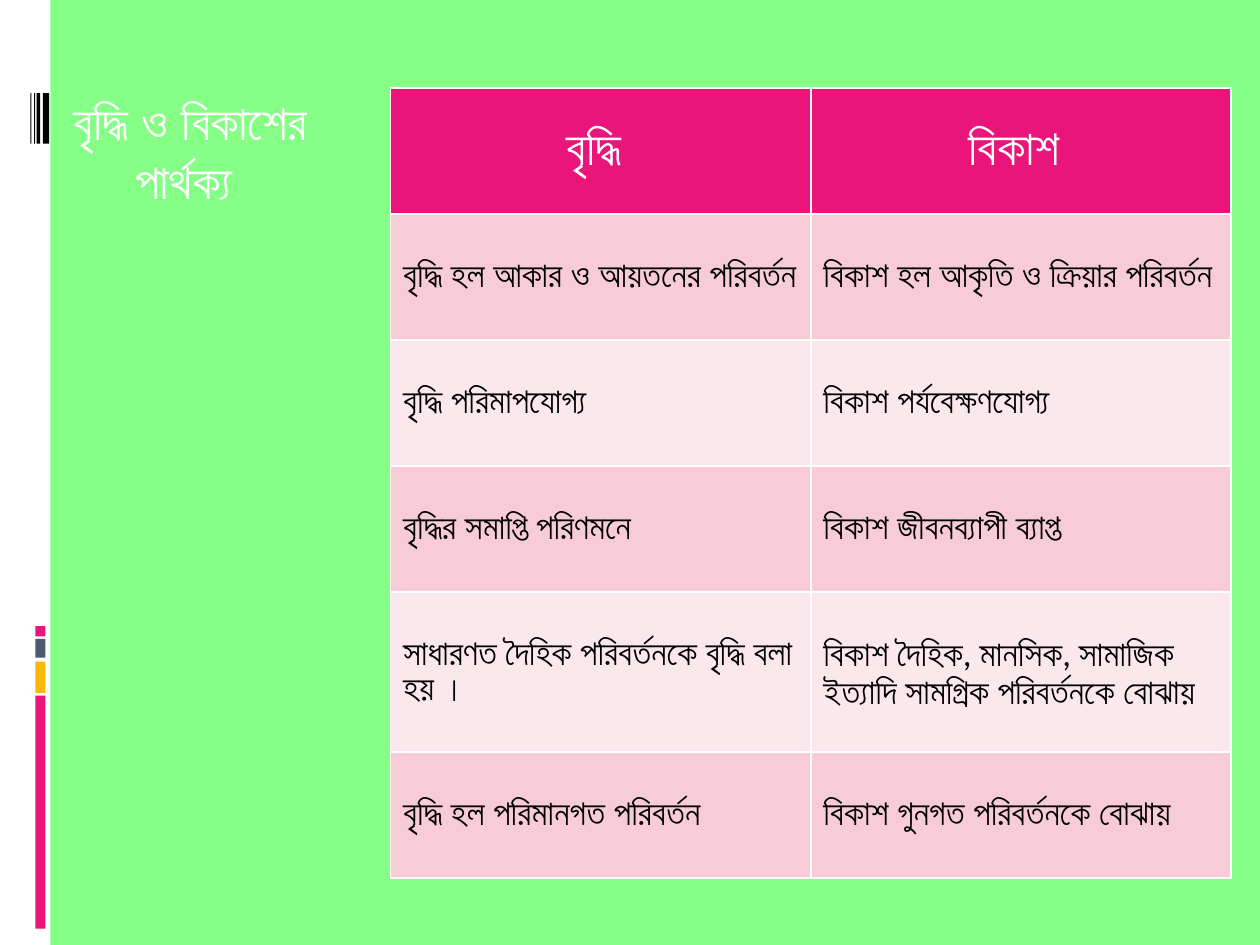
"""Build the slide comparing growth and development."""
from dataclasses import dataclass

from lxml import etree
from pptx import Presentation
from pptx.dml.color import RGBColor
from pptx.enum import shapes, text
from pptx.oxml import ns
from pptx.util import Inches, Pt


@dataclass(frozen=True)
class Theme:
    background: str = "85FF85"
    white: str = "FFFFFF"
    black: str = "000000"
    pink: str = "EA157A"
    amber: str = "FEB80A"
    slate: str = "4E5B6F"
    bands: tuple = ("F7CCD7", "FBE8EC")
    title_font: str = "Lato"
    table_font: str = "Calibri"
    heading_size: int = 28
    body_size: int = 20


@dataclass(frozen=True)
class Bar:
    left: float
    top: float
    width: float
    height: float
    color: str


THEME = Theme()
BARS = [
    Bar(0, 0, 0.4, 7.5, THEME.white),
    *(Bar(left, 0.74, width, 0.4, THEME.black)
      for left, width in ((0.34, 0.05), (0.29, 0.03), (0.27, 0.01), (0.24, 0.01))),
    *(Bar(0.28, top, 0.08, height, color)
      for top, height, color in ((5.52, 1.85, THEME.pink), (5.25, 0.25, THEME.amber),
                                 (5.07, 0.15, THEME.slate), (4.97, 0.08, THEME.pink))),
]
TITLE = ("বৃদ্ধি ও বিকাশের", "পার্থক্য ")
ROWS = [
    ("বৃদ্ধি ", "বিকাশ "),
    ("বৃদ্ধি হল আকার ও আয়তনের পরিবর্তন", "বিকাশ হল আকৃতি ও ক্রিয়ার পরিবর্তন"),
    ("বৃদ্ধি পরিমাপযোগ্য", "বিকাশ পর্যবেক্ষণযোগ্য"),
    ("বৃদ্ধির সমাপ্তি পরিণমনে", "বিকাশ জীবনব্যাপী ব্যাপ্ত"),
    ("সাধারণত দৈহিক পরিবর্তনকে বৃদ্ধি বলা হয় ।",
     "বিকাশ দৈহিক, মানসিক, সামাজিক ইত্যাদি সামগ্রিক পরিবর্তনকে বোঝায়"),
    ("বৃদ্ধি হল পরিমানগত পরিবর্তন", "বিকাশ গুনগত পরিবর্তনকে বোঝায়"),
]
ROW_HEIGHTS = (1, 1, 1, 1, 1.27, 1)
HEADING = {"size": Pt(THEME.heading_size), "bold": True}
BODY = {"size": Pt(THEME.body_size), "bold": False}


def paint(fill, color: str) -> None:
    """Give a fill one solid colour."""
    fill.solid()
    fill.fore_color.rgb = RGBColor.from_string(color)


def write(paragraph, content: str, name: str, color: str, values: dict, alignment) -> None:
    """Write one formatted run into a paragraph."""
    paragraph.alignment = alignment
    run = paragraph.add_run()
    run.text = content
    for attribute, value in {**values, "name": name}.items():
        setattr(run.font, attribute, value)
    run.font.color.rgb = RGBColor.from_string(color)


def draw_bar(slide, bar: Bar) -> None:
    """Draw one borderless bar of the side strip."""
    shape = slide.shapes.add_shape(
        shapes.MSO_SHAPE.RECTANGLE,
        *map(Inches, (bar.left, bar.top, bar.width, bar.height)))
    shape.shadow.inherit = False
    paint(shape.fill, bar.color)
    shape.line.fill.background()


def draw_title(slide) -> None:
    """Fill and move the title placeholder."""
    title = slide.shapes.title
    box = {"left": 0, "top": 0.68, "width": 3.02, "height": 1.04}
    for attribute, value in box.items():
        setattr(title, attribute, Inches(value))
    frame = title.text_frame
    settings = {"word_wrap": True, "vertical_anchor": text.MSO_ANCHOR.TOP,
                "auto_size": text.MSO_AUTO_SIZE.SHAPE_TO_FIT_TEXT}
    for attribute, value in settings.items():
        setattr(frame, attribute, value)
    for index, line in enumerate(TITLE):
        paragraph = frame.add_paragraph() if index else frame.paragraphs[0]
        write(paragraph, line, THEME.title_font, THEME.white, HEADING, text.PP_ALIGN.CENTER)


def add_borders(cell) -> None:
    """Put a thin white line on every side of a cell."""
    properties = cell._tc.get_or_add_tcPr()
    for index, side in enumerate(("lnL", "lnR", "lnT", "lnB")):
        line = etree.Element(ns.qn(f"a:{side}"), w=str(Pt(1)))
        fill = etree.SubElement(line, ns.qn("a:solidFill"))
        etree.SubElement(fill, ns.qn("a:srgbClr"), val=THEME.white)
        properties.insert(index, line)


def draw_table(slide) -> None:
    """Draw the comparison table with a heading row and banded rows."""
    frame = slide.shapes.add_table(
        len(ROWS), len(ROWS[0]), Inches(3.1), Inches(0.7),
        Inches(6.67), Inches(sum(ROW_HEIGHTS)))
    table = frame.table
    for row_index, (contents, height) in enumerate(zip(ROWS, ROW_HEIGHTS)):
        table.rows[row_index].height = Inches(height)
        heading = row_index == 0
        fill = THEME.pink if heading else THEME.bands[(row_index - 1) % 2]
        color = THEME.white if heading else THEME.black
        values = HEADING if heading else BODY
        alignment = text.PP_ALIGN.CENTER if heading else text.PP_ALIGN.LEFT
        for column_index, content in enumerate(contents):
            cell = table.cell(row_index, column_index)
            cell.vertical_anchor = text.MSO_ANCHOR.MIDDLE
            paint(cell.fill, fill)
            add_borders(cell)
            write(cell.text_frame.paragraphs[0], content, THEME.table_font,
                  color, values, alignment)


def main() -> None:
    """Build and save the presentation."""
    presentation = Presentation()
    presentation.slide_width, presentation.slide_height = Inches(10), Inches(7.5)
    slide = presentation.slides.add_slide(presentation.slide_layouts.get_by_name("Title Only"))
    paint(slide.background.fill, THEME.background)
    for bar in BARS:
        draw_bar(slide, bar)
    draw_title(slide)
    draw_table(slide)
    presentation.save("out.pptx")


if __name__ == "__main__":
    main()
